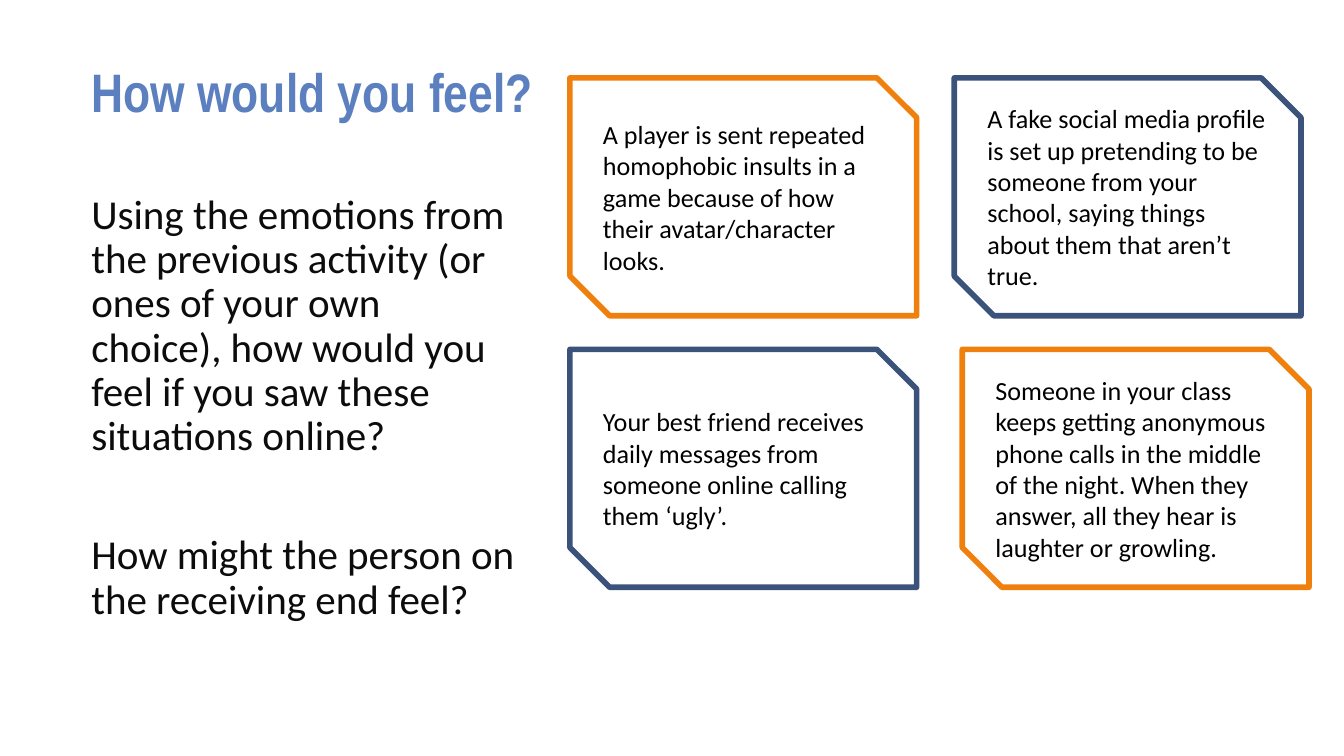
from pptx import Presentation, util as u
from pptx.dml.color import RGBColor
from pptx.enum import shapes, text

# Content
TITLE = "How would you feel?"
PROMPTS = [
    "Using the emotions from the previous activity (or ones of your own choice), "
    "how would you feel if you saw these situations online?",
    "How might the person on the receiving end feel?",
]
# Each row of cards: (left, outline colour, wording)
CARD_ROWS = [
    [
        (4.24, "orange", "A player is sent repeated homophobic insults in a game "
                         "because of how their avatar/character looks."),
        (7.10, "navy", "A fake social media profile is set up pretending to be someone "
                       "from your school, saying things about them that aren’t true."),
    ],
    [
        (4.24, "navy", "Your best friend receives daily messages from someone online "
                       "calling them ‘ugly’."),
        (7.16, "orange", "Someone in your class keeps getting anonymous phone calls in the "
                         "middle of the night. When they answer, all they hear is laughter "
                         "or growling."),
    ],
]

COLOURS = {"title": "5B7FBF", "prompt": "0C0C0C", "card": "000000",
           "orange": "F0800E", "navy": "3B527B"}
FONTS = {
    "title": {"name": "Arial Narrow", "size": u.Pt(29), "bold": True},
    "prompt": {"name": "Calibri", "size": u.Pt(22)},
    "card": {"name": "Calibri", "size": u.Pt(14)},
}
SLIDE_WIDTH = 10
SLIDE_HEIGHT = SLIDE_WIDTH * 9 / 16
CARD_TOP, CARD_WIDTH, CARD_HEIGHT, ROW_STEP = 0.58, 2.58, 1.77, 2.02
PROMPT_GAP = u.Pt(40)


def colour(name):
    return RGBColor.from_string(COLOURS[name])


def write(shape, paragraphs, style, anchor, inset, spacing=1.0):
    """Fill a shape with left-aligned, wrapped paragraphs in one style."""
    frame = shape.text_frame
    side, end = (u.Inches(value) for value in inset)
    settings = {"word_wrap": True, "auto_size": text.MSO_AUTO_SIZE.NONE,
                "vertical_anchor": anchor, "margin_left": side, "margin_right": side,
                "margin_top": end, "margin_bottom": end}
    for key, value in settings.items():
        setattr(frame, key, value)
    for index, wording in enumerate(paragraphs):
        para = frame.add_paragraph() if index else frame.paragraphs[0]
        para.alignment = text.PP_ALIGN.LEFT
        para.line_spacing = spacing
        if index:
            para.space_before = PROMPT_GAP
        span = para.add_run()
        span.text = wording
        for key, value in FONTS[style].items():
            setattr(span.font, key, value)
        span.font.color.rgb = colour(style)


def add_card(page, left, top, outline, wording):
    box = page.shapes.add_shape(
        shapes.MSO_SHAPE.SNIP_2_DIAG_RECTANGLE,
        *map(u.Inches, (left, top, CARD_WIDTH, CARD_HEIGHT)))
    box.adjustments[0], box.adjustments[1] = 0, 0.167
    box.shadow.inherit = False
    box.fill.background()
    box.line.color.rgb = colour(outline)
    box.line.width = u.Pt(3)
    write(box, [wording], "card", text.MSO_ANCHOR.MIDDLE, (0.1, 0.1))


def main():
    deck = Presentation()
    deck.slide_width, deck.slide_height = map(u.Inches, (SLIDE_WIDTH, SLIDE_HEIGHT))
    page = deck.slides.add_slide(deck.slide_layouts[5])

    # Title
    title = page.shapes.title
    place = {"left": 0.61, "top": 0.37, "width": 8.77, "height": 0.67}
    for key, value in place.items():
        setattr(title, key, u.Inches(value))
    write(title, [TITLE], "title", text.MSO_ANCHOR.MIDDLE, (0.07, 0.04), 0.9)

    # Discussion prompts
    prompts = page.shapes.add_textbox(*map(u.Inches, (0.61, 1.4, 3.3, 3.68)))
    write(prompts, PROMPTS, "prompt", text.MSO_ANCHOR.TOP, (0.07, 0.04), 0.9)

    # Situation cards
    for row, cards in enumerate(CARD_ROWS):
        for left, outline, wording in cards:
            add_card(page, left, CARD_TOP + row * ROW_STEP, outline, wording)

    deck.save("out.pptx")


if __name__ == "__main__":
    main()
